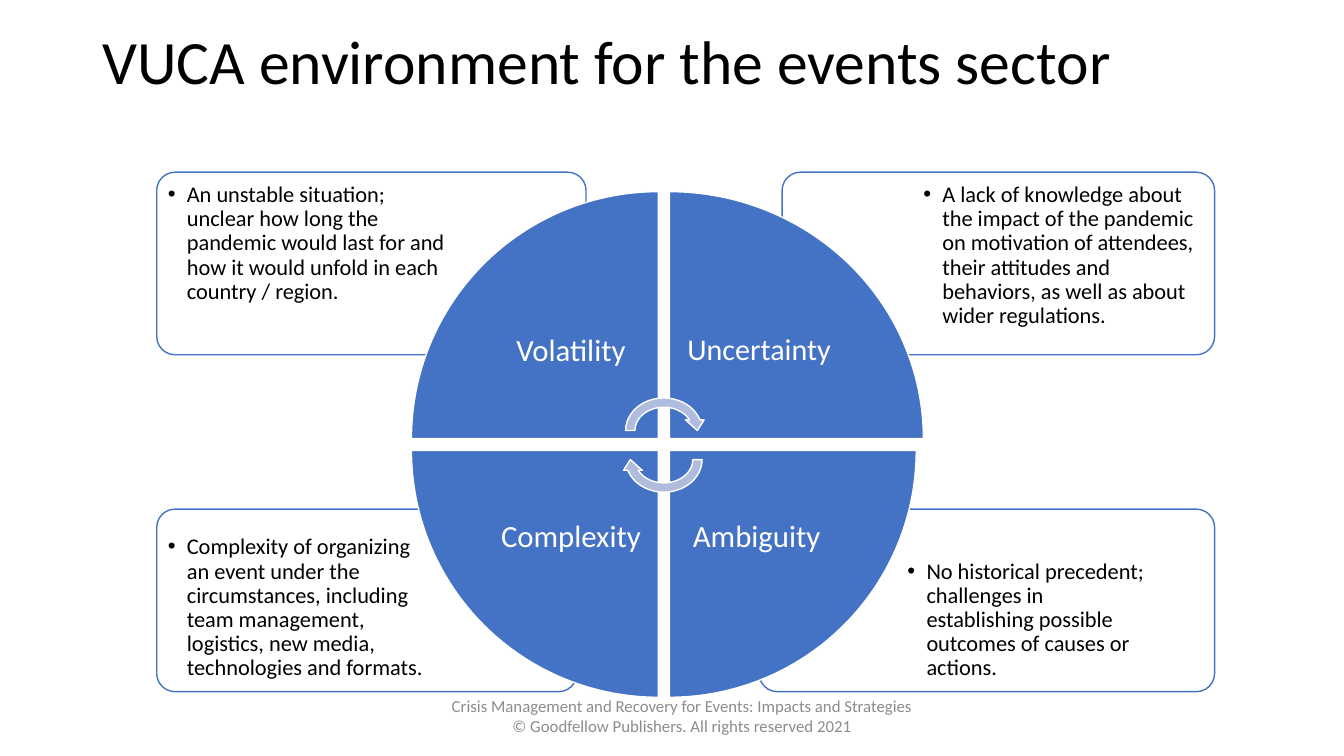
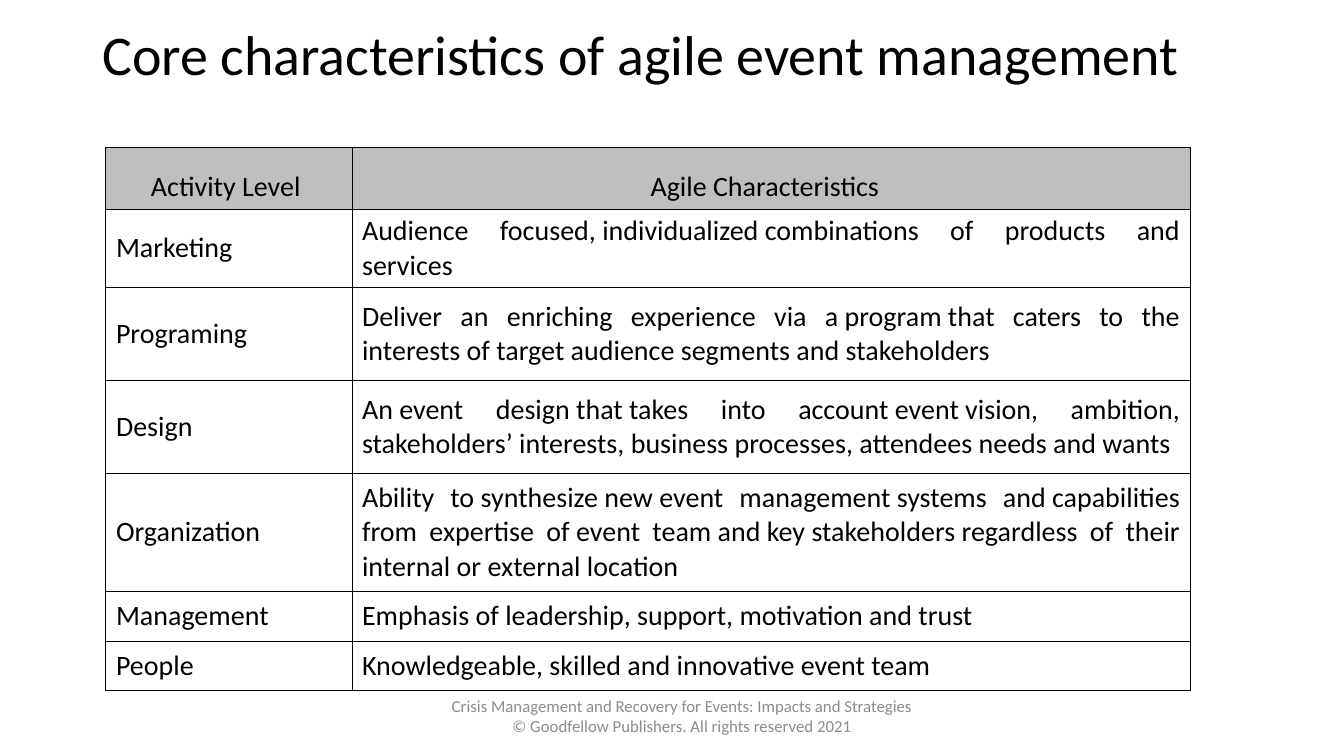
from dataclasses import dataclass

from lxml import etree
from pptx import Presentation
from pptx.dml.color import RGBColor
from pptx.enum.shapes import MSO_SHAPE
from pptx.enum.text import MSO_ANCHOR, PP_ALIGN
from pptx.oxml.ns import qn
from pptx.util import Cm, Pt

LEFT, CENTER, JUSTIFY = PP_ALIGN.LEFT, PP_ALIGN.CENTER, PP_ALIGN.JUSTIFY
TOP, MIDDLE, BOTTOM = MSO_ANCHOR.TOP, MSO_ANCHOR.MIDDLE, MSO_ANCHOR.BOTTOM
CARD, WEDGE, ARROW = (MSO_SHAPE.ROUNDED_RECTANGLE, MSO_SHAPE.PIE_WEDGE,
                      MSO_SHAPE.CIRCULAR_ARROW)
NO_BREAK_SPACE = chr(160)


@dataclass(frozen=True)
class Theme:
    font: str = "Calibri"
    text: str = "000000"
    paper: str = "FFFFFF"
    accent: str = "4472C4"
    arrow: str = "B0BCDE"
    header: str = "BFBFBF"
    footer: str = "8C8C8C"
    vuca_title_size: float = 44
    agile_title_size: float = 40
    footer_size: float = 12
    note_size: float = 16
    table_size: float = 20
    label_size: float = 22
    long_label_size: float = 21.5
    outline: float = 1
    grid: float = 0.75


THEME = Theme()

FOOTER = ("Crisis Management and Recovery for Events: Impacts and Strategies\n"
          "© Goodfellow Publishers. All rights reserved 2021")


@dataclass(frozen=True)
class Quadrant:
    label: str
    note: str
    right: bool
    bottom: bool
    rotation: int
    card_width: float
    note_width: float
    wedge_width: float = 6.22
    label_width: float = 4.4
    label_size: float = THEME.label_size


# A tilde in the texts below stands for a no-break space; see tie().
QUADRANTS = [
    Quadrant("Volatility",
             "An unstable~situation; unclear how long the pandemic~would~last for "
             "and how it would unfold in each country / region.",
             False, False, 0, 10.82, 7.37),
    Quadrant("Uncertainty",
             "A lack of knowledge about the impact of the pandemic on motivation of "
             "attendees, their attitudes and behaviors, as well as about wider "
             "regulations.",
             True, False, 90, 10.9, 7.42, wedge_width=6.4, label_width=4.52,
             label_size=THEME.long_label_size),
    Quadrant("Ambiguity",
             "No historical precedent; challenges in establishing~possible "
             "outcomes~of~causes or actions.",
             True, True, 180, 11.48, 7.82),
    Quadrant("Complexity",
             "Complexity of organizing an event under the circumstances, including "
             "team management, logistics, new media, technologies and formats.",
             False, True, 270, 10.59, 7),
]

ACTIVITIES = [
    ("Activity Level~", "Agile Characteristics~~"),
    ("Marketing", "Audience focused,~individualized~combinations of products and "
                  "services~"),
    ("Programing", "Deliver an enriching experience via a~program~that caters to the "
                   "interests of target~audience~segments~and stakeholders"),
    ("Design", "An~event design~that~takes into account~event~vision, ambition, "
               "stakeholders’ interests, business processes, "
               "attendees~needs~and~wants"),
    ("Organization", "Ability to~synthesize~new~event management~systems "
                     "and~capabilities from expertise of~event "
                     "team~and~key~stakeholders~regardless of their internal "
                     "or external~location"),
    ("Management", "Emphasis of leadership, support, motivation and trust"),
    ("People", "Knowledgeable, skilled and innovative event team"),
]
COLUMN_WIDTHS = (6.2, 21.13)
ROW_HEIGHTS = (1.55, 1.98, 2.34, 2.34, 2.97, 1.26, 1.25)


def rgb(color):
    return RGBColor.from_string(color)


def tie(text):
    """Join words marked with a tilde by a no-break space."""
    return text.replace("~", NO_BREAK_SPACE)


def style_paragraph(paragraph, size, color=THEME.text, align=LEFT, spacing=1.0):
    paragraph.alignment = align
    paragraph.line_spacing = spacing
    paragraph.font.name = THEME.font
    paragraph.font.size = Pt(size)
    paragraph.font.color.rgb = rgb(color)


def add_bullet(paragraph, indent=0.48):
    properties = paragraph._p.get_or_add_pPr()
    properties.set("marL", str(Cm(indent)))
    properties.set("indent", str(-Cm(indent)))
    etree.SubElement(properties, qn("a:buFont")).set("typeface", "Arial")
    etree.SubElement(properties, qn("a:buChar")).set("char", "•")


def add_text(slide, text, left, top, width, height, size, anchor=TOP,
             inset=None, bullet=False, **style):
    frame = slide.shapes.add_textbox(Cm(left), Cm(top), Cm(width), Cm(height)).text_frame
    frame.word_wrap = True
    frame.vertical_anchor = anchor
    if inset is not None:
        frame.margin_left = frame.margin_right = Cm(inset)
        frame.margin_top = frame.margin_bottom = Cm(inset)
    frame.text = tie(text)
    for paragraph in frame.paragraphs:
        if bullet:
            add_bullet(paragraph)
        style_paragraph(paragraph, size, **style)


def add_figure(slide, kind, left, top, width, height, fill, line, rotation=0):
    """Add a preset shape; the box given is the one seen after a quarter turn."""
    if rotation % 180:
        left, top = left + (width - height) / 2, top + (height - width) / 2
        width, height = height, width
    figure = slide.shapes.add_shape(kind, Cm(left), Cm(top), Cm(width), Cm(height))
    figure.rotation = rotation
    figure.shadow.inherit = False
    figure.fill.solid()
    figure.fill.fore_color.rgb = rgb(fill)
    figure.line.color.rgb = rgb(line)
    figure.line.width = Pt(THEME.outline)
    return figure


def add_titled_slide(deck, title, size, top):
    slide = deck.slides.add_slide(deck.slide_layouts[6])
    add_text(slide, FOOTER, 2.51, 17.41, 29.36, 1.24, THEME.footer_size,
             anchor=MIDDLE, color=THEME.footer, align=CENTER)
    add_text(slide, title, 2.33, top, 29.21, 3.2, size, spacing=0.9)
    return slide


def add_card(slide, quadrant):
    height, padding = 4.6, 0.1
    top = 12.83 if quadrant.bottom else 4.34
    if quadrant.right:
        right = 30.61
        left = right - quadrant.card_width
        note_left = right - padding - quadrant.note_width
    else:
        left = 3.95
        note_left = left + padding
    card = add_figure(slide, CARD, left, top, quadrant.card_width, height,
                      THEME.paper, THEME.accent)
    card.adjustments[0] = 0.1
    add_text(slide, quadrant.note, note_left, top + padding, quadrant.note_width,
             height - 2 * padding, THEME.note_size, inset=0.18, bullet=True,
             anchor=BOTTOM if quadrant.bottom else TOP, spacing=0.9)


def add_wedge(slide, quadrant):
    """Set a wedge and its label against the inner corner of the quadrant."""
    wedge_height, label_height = 6.22, 4.4
    inner_x = 16.87 if quadrant.right else 16.59
    inner_y = 11.35 if quadrant.bottom else 11.05

    def box(width, height):
        return (inner_x if quadrant.right else inner_x - width,
                inner_y if quadrant.bottom else inner_y - height, width, height)

    add_figure(slide, WEDGE, *box(quadrant.wedge_width, wedge_height),
               THEME.accent, THEME.paper, quadrant.rotation)
    add_text(slide, quadrant.label, *box(quadrant.label_width, label_height),
             quadrant.label_size, anchor=MIDDLE, inset=0.2, color=THEME.paper,
             align=CENTER, spacing=0.9)


def add_cell_borders(cell):
    properties = cell._tc.get_or_add_tcPr()
    for side in ("lnL", "lnR", "lnT", "lnB"):
        border = etree.SubElement(properties, qn(f"a:{side}"), w=str(Pt(THEME.grid)))
        fill = etree.SubElement(border, qn("a:solidFill"))
        etree.SubElement(fill, qn("a:srgbClr"), val=THEME.text)


def fill_cell(cell, text, is_header):
    cell.text = tie(text)
    cell.vertical_anchor = TOP if is_header else MIDDLE
    add_cell_borders(cell)
    cell.fill.solid()
    cell.fill.fore_color.rgb = rgb(THEME.header if is_header else THEME.paper)
    style_paragraph(cell.text_frame.paragraphs[0], THEME.table_size,
                    align=CENTER if is_header else JUSTIFY,
                    spacing=1.5 if is_header else 1.0)


def add_activity_table(slide):
    table = slide.shapes.add_table(
        len(ACTIVITIES), len(COLUMN_WIDTHS), Cm(2.67), Cm(3.72),
        Cm(sum(COLUMN_WIDTHS)), Cm(sum(ROW_HEIGHTS))).table
    table.first_row = table.horz_banding = False
    for column, width in zip(table.columns, COLUMN_WIDTHS):
        column.width = Cm(width)
    for index, (row, height) in enumerate(zip(table.rows, ROW_HEIGHTS)):
        row.height = Cm(height)
        for cell, text in zip(row.cells, ACTIVITIES[index]):
            fill_cell(cell, text, index == 0)


def build_vuca_slide(deck):
    slide = add_titled_slide(deck, "VUCA environment for the events sector",
                             THEME.vuca_title_size, 0.66)
    for quadrant in QUADRANTS:
        add_card(slide, quadrant)
    for quadrant in QUADRANTS:
        add_wedge(slide, quadrant)
    for top, rotation in ((9.91, 0), (10.64, 180)):
        add_figure(slide, ARROW, 15.65, top, 2.16, 1.88, THEME.arrow, THEME.paper,
                   rotation)


def build_agile_slide(deck):
    slide = add_titled_slide(deck, "Core characteristics of agile event management",
                             THEME.agile_title_size, 0.56)
    add_activity_table(slide)


def main():
    deck = Presentation()
    deck.slide_width, deck.slide_height = Cm(33.87), Cm(19.05)
    build_vuca_slide(deck)
    build_agile_slide(deck)
    deck.save("out.pptx")


if __name__ == "__main__":
    main()
